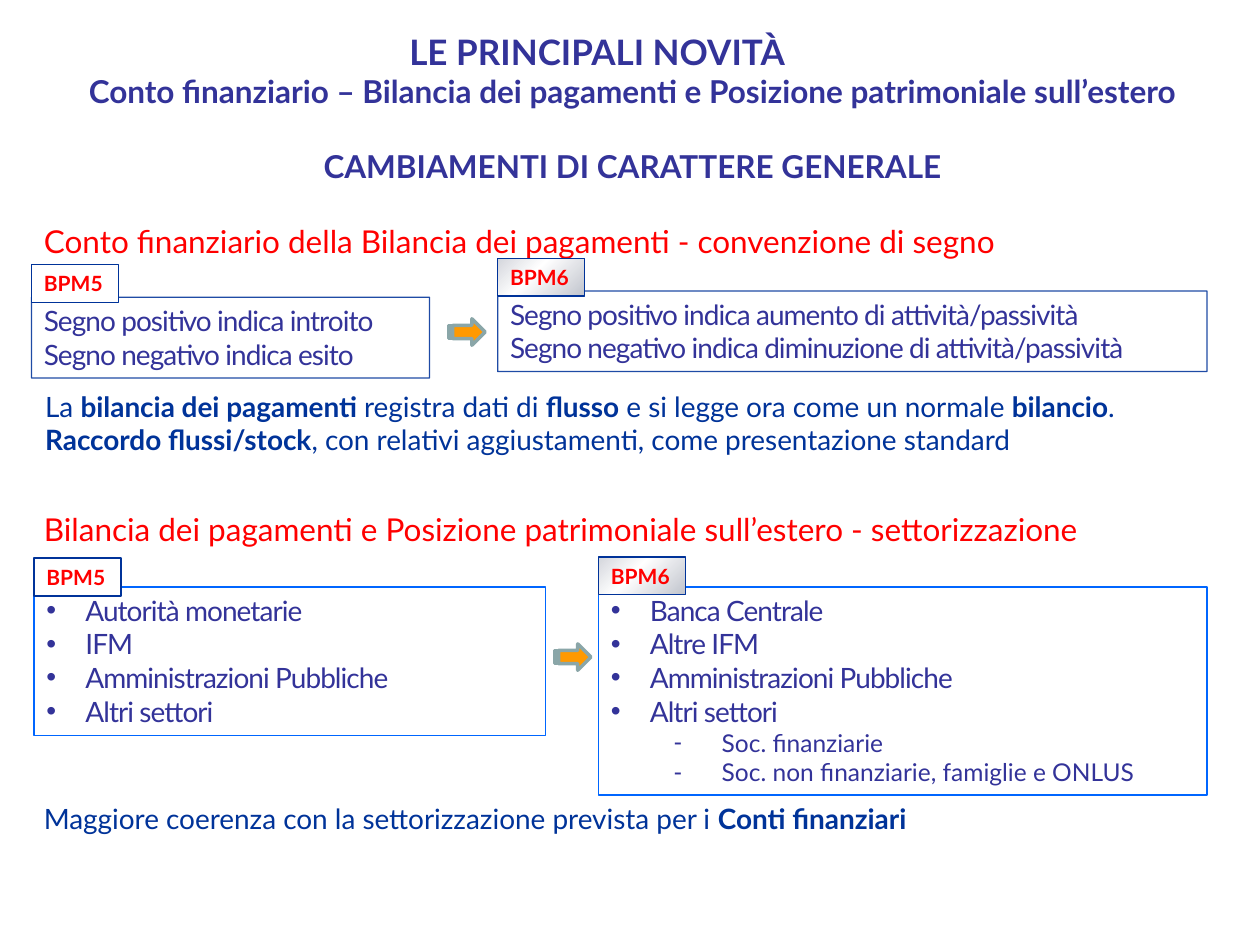
import pptx
import pptx.dml.color
import pptx.enum.dml
import pptx.enum.shapes
import pptx.enum.text
import pptx.util
from lxml import etree
from pptx.util import Inches

RGBColor = pptx.dml.color.RGBColor
Pt = pptx.util.Pt
ALIGN = pptx.enum.text.PP_ALIGN
SHAPES = pptx.enum.shapes.MSO_SHAPE

INDIGO = RGBColor(0x33, 0x33, 0x99)
NAVY = RGBColor(0x00, 0x33, 0x99)
BLUE = RGBColor(0x00, 0x66, 0xFF)
RED = RGBColor(0xFF, 0x00, 0x00)
WHITE = RGBColor(0xFF, 0xFF, 0xFF)
ORANGE = RGBColor(0xFF, 0x99, 0x00)
GREY_GREEN = RGBColor(0x8A, 0xA6, 0xA8)
SILVER_STOPS = [(0, "D4D6DC"), (41, "FFFFFF"), (100, "C1C4CD"), (100, "E6E6E6")]
FONT = "Lato"


def add_xml(parent, name, **attributes):
    namespace = pptx.oxml.ns.nsdecls("a").split('"')[1]
    return etree.SubElement(parent, f"{{{namespace}}}{name}", attributes)


def style_span(span, size, color, bold=False, spacing=0):
    span.font.name = FONT
    span.font.size = Pt(size)
    span.font.bold = bold
    span.font.color.rgb = color
    if spacing:
        span.font._element.set("spc", str(round(spacing * 100)))


def next_para(frame, index):
    return frame.paragraphs[0] if index == 0 else frame.add_paragraph()


def add_text(page, box, lines, size, color, bold=False, wrap=False, align=ALIGN.LEFT):
    frame = page.shapes.add_textbox(*map(Inches, box)).text_frame
    frame.word_wrap = wrap
    for index, line in enumerate(lines):
        para = next_para(frame, index)
        para.alignment = align
        for position, text in enumerate(line.split("**")):
            if text:
                span = para.add_run()
                span.text = text
                style_span(span, size, color, bold or position % 2 == 1)
    return frame


def add_outlined(page, kind, box, line_color, line_width):
    shape = page.shapes.add_shape(kind, *map(Inches, box))
    shape.shadow.inherit = False
    shape.line.color.rgb = line_color
    shape.line.width = Pt(line_width)
    return shape


def fill_silver(shape):
    shape.fill.gradient()
    shape.fill.gradient_angle = 315
    stops = shape._element.spPr.find(".//" + pptx.oxml.ns.qn("a:gsLst"))
    for stop in list(stops):
        stops.remove(stop)
    for percent, color in SILVER_STOPS:
        stop = add_xml(stops, "gs", pos=str(percent * 1000))
        add_xml(stop, "srgbClr", val=color)


def set_bullet(para, mark, margin, indent):
    properties = para._p.get_or_add_pPr()
    properties.set("marL", str(Inches(margin)))
    properties.set("indent", str(-Inches(indent)))
    add_xml(properties, "buFont", typeface="Arial")
    add_xml(properties, "buChar", char=mark)


def add_tag(page, left, top, label, silver):
    tag = add_outlined(page, SHAPES.RECTANGLE, (left, top, 0.69, 0.3), NAVY, 0.75)
    if silver:
        fill_silver(tag)
    else:
        tag.fill.solid()
        tag.fill.fore_color.rgb = WHITE
    frame = tag.text_frame
    frame.word_wrap = False
    frame.text = label
    para = frame.paragraphs[0]
    para.alignment = ALIGN.LEFT
    style_span(para.runs[0], 12, RED, bold=True)


def add_panel(page, box, label, tag_rise, lines, sublines=(), bulleted=False):
    panel = add_outlined(page, SHAPES.RECTANGLE, box, BLUE if bulleted else NAVY, 0.75)
    panel.fill.background()
    if not bulleted:
        color = panel.line._ln.find(".//" + pptx.oxml.ns.qn("a:srgbClr"))
        add_xml(color, "alpha", val="88000")
    frame = panel.text_frame
    frame.word_wrap = True
    frame.vertical_anchor = pptx.enum.text.MSO_ANCHOR.TOP
    for index, text in enumerate([*lines, *sublines]):
        para = next_para(frame, index)
        para.text = text
        para.alignment = ALIGN.LEFT
        nested = index >= len(lines)
        if nested:
            para.level = 1
            set_bullet(para, "-", 0.88, 0.38)
        elif bulleted:
            set_bullet(para, "•", 0.31, 0.31)
        style_span(para.runs[0], 14 if nested else 16, INDIGO, spacing=0 if nested else -0.5)
    left, top = box[:2]
    add_tag(page, left, top - tag_rise, label, silver=label == "BPM6")


def add_arrow(page, left, top):
    box = (left, top, 0.29, 0.21)
    arrow = add_outlined(page, SHAPES.STRIPED_RIGHT_ARROW, box, GREY_GREEN, 2)
    arrow.fill.solid()
    arrow.fill.fore_color.rgb = ORANGE


def add_header(page, left, top):
    add_text(page, (left + 3.27, top, 3.55, 0.44), ["LE PRINCIPALI NOVITÀ"], 20, INDIGO, bold=True)
    titles = [
        "Conto finanziario – Bilancia dei pagamenti e Posizione patrimoniale sull’estero",
        "CAMBIAMENTI DI CARATTERE GENERALE",
    ]
    frame = add_text(page, (left, top + 0.38, 10.28, 0.9), titles, 18, INDIGO,
                     bold=True, wrap=True, align=ALIGN.CENTER)
    frame.vertical_anchor = pptx.enum.text.MSO_ANCHOR.MIDDLE
    frame.paragraphs[1].space_before = Pt(21)


def add_sign_section(page, left, top):
    heading = "Conto finanziario della Bilancia dei pagamenti - convenzione di segno"
    add_text(page, (left, top, 7.99, 0.4), [heading], 18, RED)
    add_panel(page, (left, top + 0.65, 3.16, 0.64), "BPM5", 0.26,
              ["Segno positivo indica introito", "Segno negativo indica esito"])
    add_panel(page, (left + 3.7, top + 0.6, 5.63, 0.64), "BPM6", 0.26,
              ["Segno positivo indica aumento di attività/passività",
               "Segno negativo indica diminuzione di attività/passività"])
    add_arrow(page, left + 3.31, top + 0.82)
    notes = [
        "La **bilancia dei pagamenti **registra dati di **flusso** e si legge ora "
        "come un normale** bilancio**.",
        "**Raccordo flussi/stock**, con relativi aggiustamenti, come presentazione standard",
    ]
    add_text(page, (left + 0.01, top + 1.33, 9.58, 0.64), notes, 16, NAVY,
             wrap=True, align=ALIGN.JUSTIFY)


def add_sector_section(page, left, top):
    heading = "Bilancia dei pagamenti e Posizione patrimoniale sull’estero - settorizzazione"
    add_text(page, (left, top, 8.55, 0.4), [heading], 18, RED)
    shared = ["Amministrazioni Pubbliche", "Altri settori"]
    add_panel(page, (left + 0.02, top + 0.66, 4.06, 1.18), "BPM5", 0.23,
              ["Autorità monetarie", "IFM", *shared], bulleted=True)
    add_panel(page, (left + 4.5, top + 0.66, 4.83, 1.65), "BPM6", 0.24,
              ["Banca Centrale", "Altre IFM", *shared],
              ["Soc. finanziarie", "Soc. non finanziarie, famiglie e ONLUS"], bulleted=True)
    add_arrow(page, left + 4.15, top + 1.11)
    note = "Maggiore coerenza con la settorizzazione prevista per i **Conti finanziari**"
    add_text(page, (left, top + 2.31, 9.33, 0.37), [note], 16, NAVY,
             wrap=True, align=ALIGN.JUSTIFY)


def main():
    deck = pptx.Presentation()
    deck.slide_width = Inches(10)
    deck.slide_height = Inches(7.5)
    page = deck.slides.add_slide(deck.slide_layouts[6])
    add_header(page, -0.12, 0.19)
    add_sign_section(page, 0.25, 1.71)
    add_sector_section(page, 0.25, 4)
    deck.save("out.pptx")


if __name__ == "__main__":
    main()
